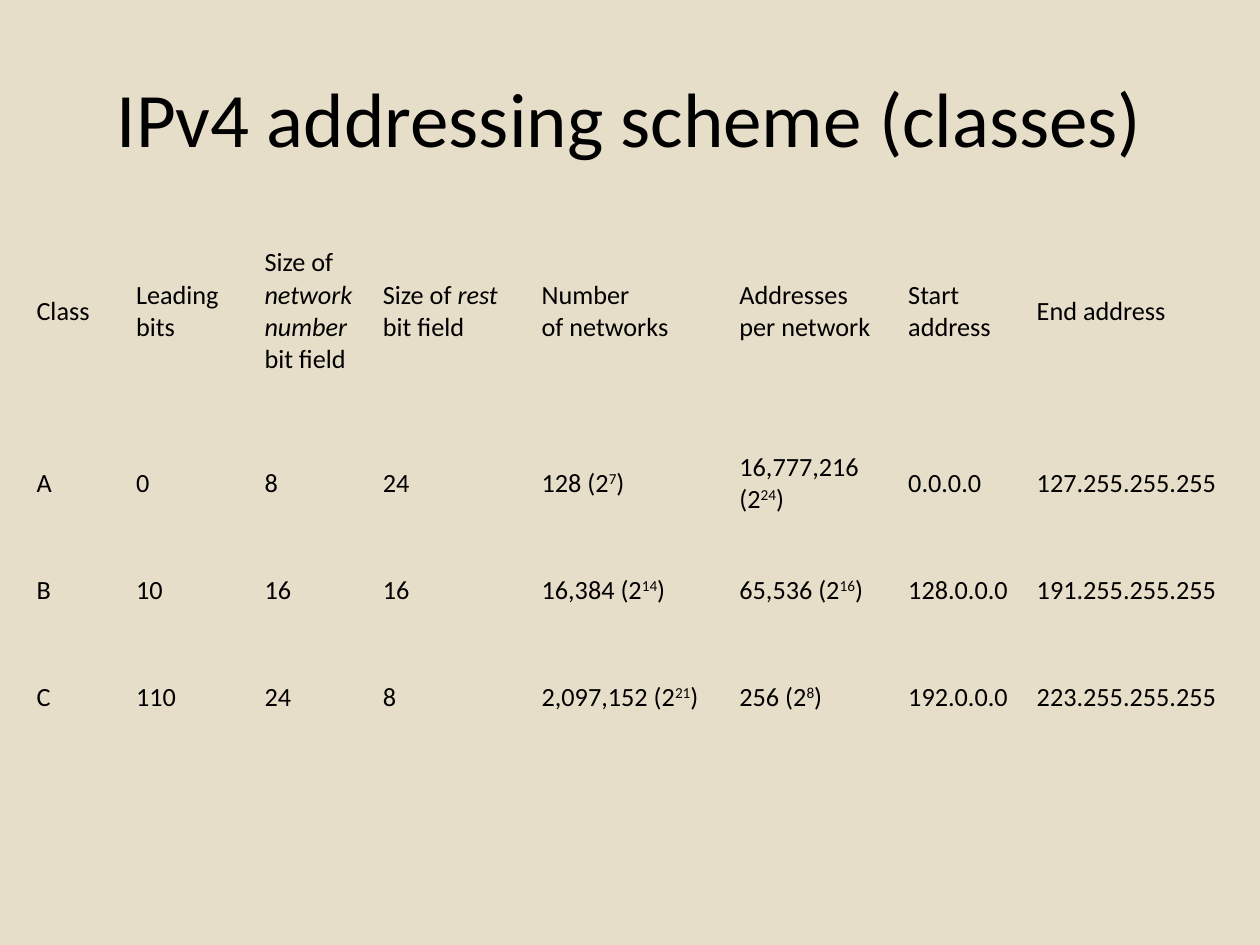
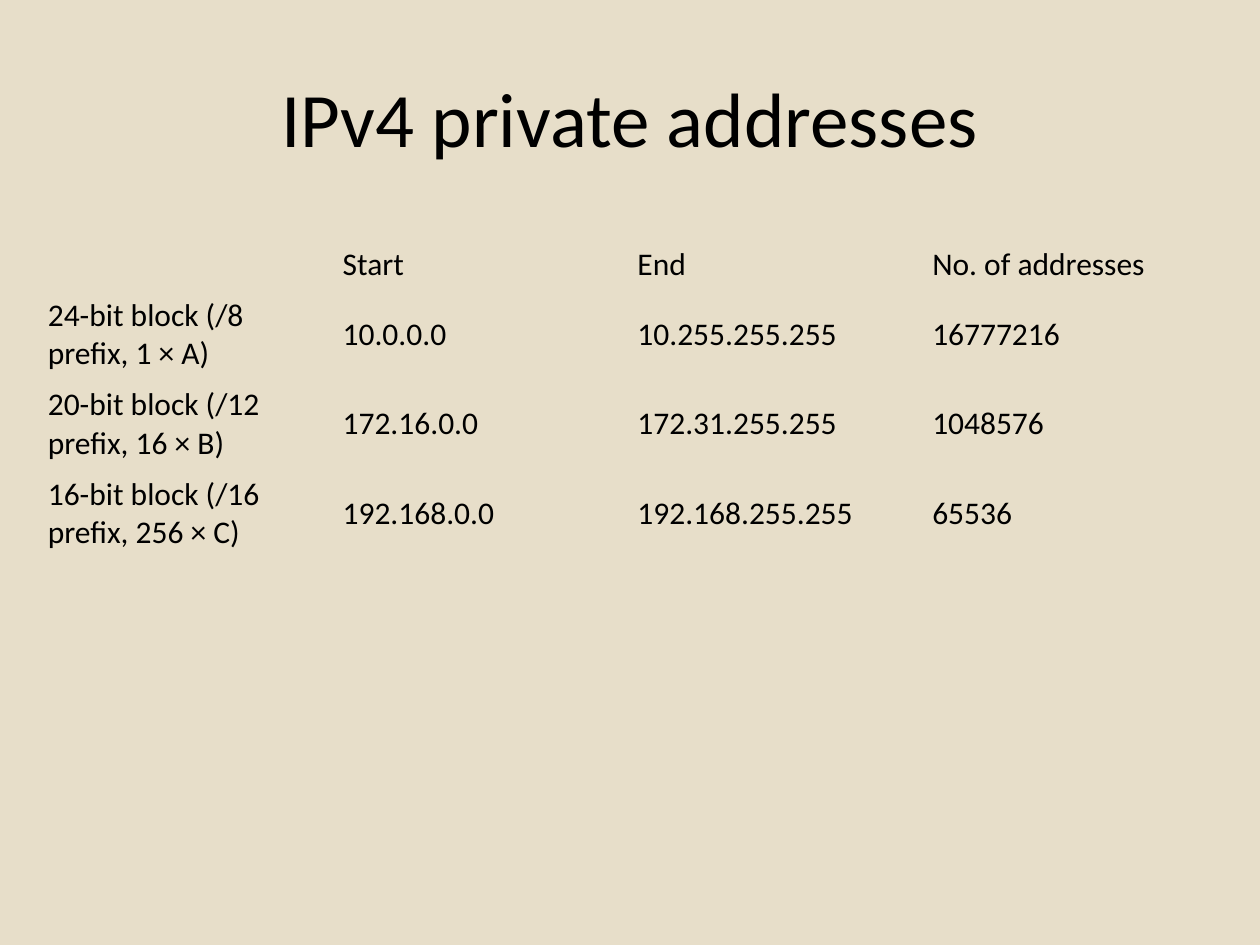
from copy import deepcopy

from pptx import Presentation
from pptx.dml.color import RGBColor
from pptx.enum.text import MSO_ANCHOR, PP_ALIGN
from pptx.util import Inches, Pt

MIDDLE = MSO_ANCHOR.MIDDLE
LEFT, CENTER = PP_ALIGN.LEFT, PP_ALIGN.CENTER

SAND = RGBColor(0xE7, 0xDE, 0xC9)
BLACK = RGBColor(0, 0, 0)
FONT = "Calibri"
PLAIN_TABLE_STYLE = "{2D5ABB26-0587-4C30-8999-92F81FD0307C}"
BLANK_LAYOUT = 6


def italic(text):
    return text, "italic"


def power_of_two(value, exponent):
    """Spans for a value followed by the same value as a power of two."""
    return [f"{value} (2", (str(exponent), "superscript"), ")"]


CLASS_COLUMNS = [0.79, 1.02, 0.94, 1.26, 1.57, 1.34, 1.02, 1.73]
CLASS_ROWS = [
    ["Class", "Leading\nbits",
     ["Size of ", italic("network\nnumber"), " bit field"],
     ["Size of ", italic("rest\n"), "bit field"],
     "Number\nof networks", "Addresses\nper network",
     "Start address", "End address"],
    ["A", "0", "8", "24", power_of_two("128", 7),
     power_of_two("16,777,216", 24), "0.0.0.0", "127.255.255.255"],
    ["B", "10", "16", "16", power_of_two("16,384", 14),
     power_of_two("65,536", 16), "128.0.0.0", "191.255.255.255"],
    ["C", "110", "24", "8", power_of_two("2,097,152", 21),
     power_of_two("256", 8), "192.0.0.0", "223.255.255.255"],
]
PRIVATE_ROWS = [
    ["", "Start", "End", "No. of addresses"],
    ["24-bit block (/8 prefix, 1 × A)",
     "10.0.0.0", "10.255.255.255", "16777216"],
    ["20-bit block (/12 prefix, 16 × B)",
     "172.16.0.0", "172.31.255.255", "1048576"],
    ["16-bit block (/16 prefix, 256 × C)",
     "192.168.0.0", "192.168.255.255", "65536"],
]


def write_text(frame, text, size, align=LEFT, color=BLACK):
    """Write a string, or a list of strings and (string, style) spans."""
    frame.word_wrap = True
    para = frame.paragraphs[0]
    para.alignment = align
    for part in [text] if isinstance(text, str) else text:
        words, style = (part, None) if isinstance(part, str) else part
        for number, line in enumerate(words.split("\n")):
            if number:
                para.add_line_break()
                # The break takes the format of the span before it.
                para._p[-1].append(deepcopy(span._r.rPr))
            if not line:
                continue
            span = para.add_run()
            span.text = line
            span.font.name = FONT
            span.font.size = Pt(size)
            span.font.color.rgb = color
            if style == "italic":
                span.font.italic = True
            elif style == "superscript":
                span.font._element.set("baseline", "30000")


def add_page(deck, title):
    page = deck.slides.add_slide(deck.slide_layouts[BLANK_LAYOUT])
    page.background.fill.solid()
    page.background.fill.fore_color.rgb = SAND
    box = page.shapes.add_textbox(Inches(0.5), Inches(0.3),
                                  Inches(9), Inches(1.25))
    box.text_frame.vertical_anchor = MIDDLE
    write_text(box.text_frame, title, size=44, align=CENTER)
    return page


def add_plain_table(page, rows, left, top, widths, heights, size):
    """Add a table without fills, borders or banding."""
    table = page.shapes.add_table(
        len(rows), len(widths), Inches(left), Inches(top),
        Inches(sum(widths)), Inches(sum(heights))).table
    table.first_row = table.horz_banding = False
    table._tbl.tblPr[0].text = PLAIN_TABLE_STYLE
    for column, width in zip(table.columns, widths):
        column.width = Inches(width)
    for row, height, texts in zip(table.rows, heights, rows):
        row.height = Inches(height)
        for cell, text in zip(row.cells, texts):
            cell.fill.background()
            cell.vertical_anchor = MIDDLE
            cell.margin_left = cell.margin_right = Inches(0.1)
            cell.margin_top = cell.margin_bottom = Inches(0.05)
            write_text(cell.text_frame, text, size)
    return table


def main():
    deck = Presentation()
    deck.slide_width, deck.slide_height = Inches(10), Inches(7.5)

    page = add_page(deck, "IPv4 addressing scheme (classes)")
    table = add_plain_table(page, CLASS_ROWS, left=0.2, top=1.53,
                            widths=CLASS_COLUMNS,
                            heights=[1.88] + [0.85] * 3, size=15)
    for cell in table.iter_cells():
        cell.margin_left = cell.margin_right = Inches(0.09)
        cell.margin_top = cell.margin_bottom = Inches(0.04)

    page = add_page(deck, "IPv4 private addresses")
    add_plain_table(page, PRIVATE_ROWS, left=0.28, top=1.9,
                    widths=[2.34] * 4, heights=[0.4] + [0.71] * 3, size=18)

    deck.save("out.pptx")


if __name__ == "__main__":
    main()
